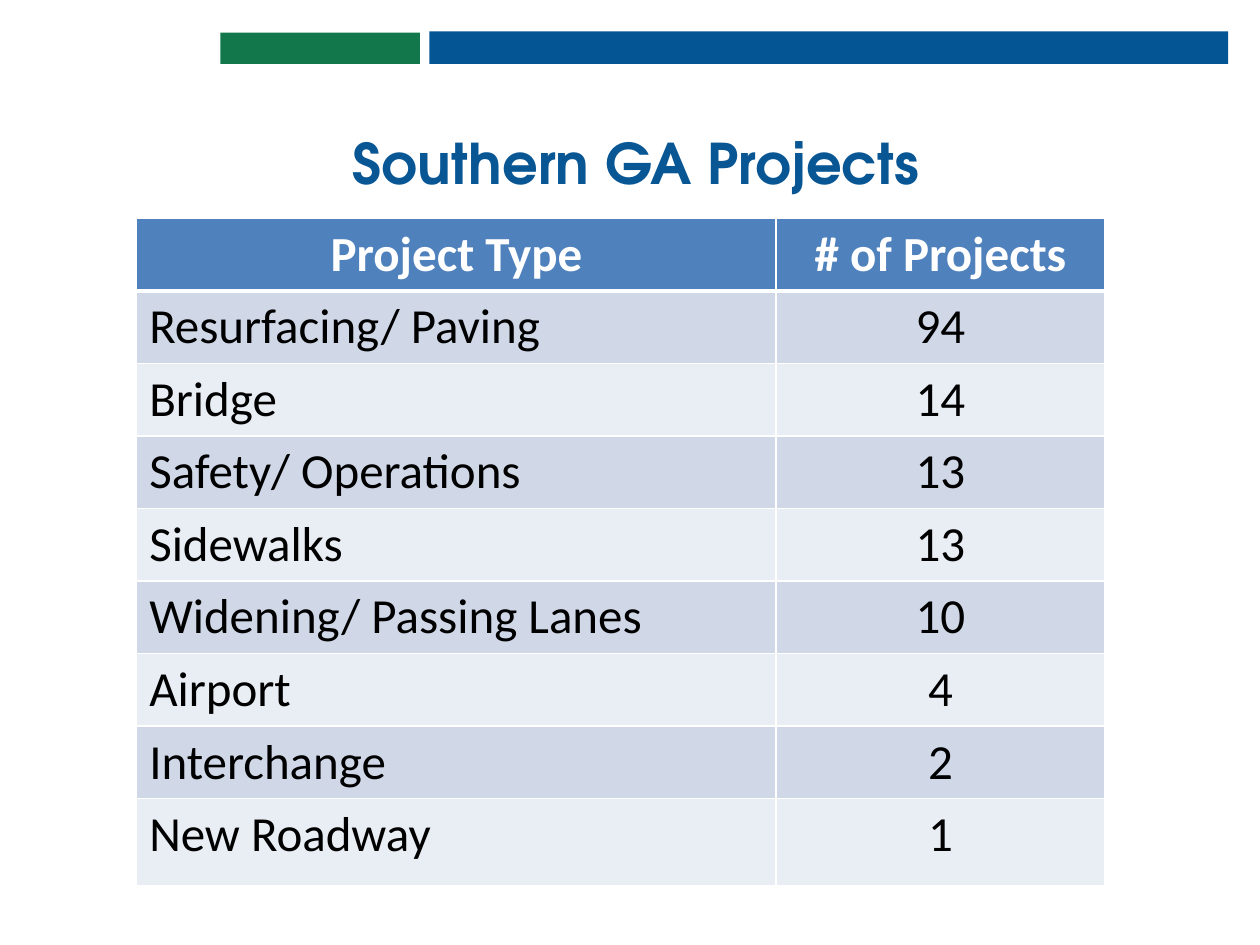
from dataclasses import dataclass

from lxml.etree import SubElement
from pptx import Presentation
from pptx.dml.color import RGBColor as RGB
from pptx.enum.shapes import MSO_SHAPE as SHAPE
from pptx.enum.text import MSO_ANCHOR as ANCHOR, MSO_AUTO_SIZE as AUTO, PP_ALIGN as ALIGN
from pptx.oxml.ns import qn
from pptx.util import Pt


@dataclass(frozen=True)
class Theme:
    blue: str = "035594"
    green: str = "12784B"
    title: str = "085694"
    header: str = "4F81BD"
    bands: tuple[str, str] = ("D0D8E8", "E9EDF4")
    white: str = "FFFFFF"
    black: str = "000000"
    title_font: str = "TeX Gyre Adventor"
    body_font: str = "Calibri"
    title_size: float = 32
    body_size: float = 28


@dataclass(frozen=True)
class Box:
    left: float
    top: float
    width: float
    height: float

    def lengths(self) -> tuple[Pt, Pt, Pt, Pt]:
        return Pt(self.left), Pt(self.top), Pt(self.width), Pt(self.height)


@dataclass(frozen=True)
class Bar:
    box: Box
    color: str


@dataclass(frozen=True)
class Project:
    kind: str
    count: int


THEME = Theme()
BARS = [
    Bar(Box(245.4, 17.9, 456.4, 18.7), THEME.blue),
    Bar(Box(125.9, 18.6, 114.1, 18), THEME.green),
]
TITLE_BOX = Box(72, 70.6, 583.2, 115.9 - 70.6)
COLUMNS = (365.4, 187.9)
ROW_HEIGHT, LAST_ROW_HEIGHT = 41.4, 50
PROJECTS = [
    Project("Resurfacing/ Paving", 94),
    Project("Bridge", 14),
    Project("Safety/ Operations", 13),
    Project("Sidewalks", 13),
    Project("Widening/ Passing Lanes", 10),
    Project("Airport", 4),
    Project("Interchange", 2),
    Project("New Roadway", 1),
]
TABLE_BOX = Box(78.1, 124.8, sum(COLUMNS), len(PROJECTS) * ROW_HEIGHT + LAST_ROW_HEIGHT)


def style_font(font, name: str, size: float, color: str, bold: bool) -> None:
    font.name, font.size, font.bold = name, Pt(size), bold
    font.color.rgb = RGB.from_string(color)


def add_bar(slide, bar: Bar) -> None:
    sp = slide.shapes.add_shape(SHAPE.RECTANGLE, *bar.box.lengths())
    sp.shadow.inherit = False
    sp.fill.solid()
    sp.fill.fore_color.rgb = RGB.from_string(bar.color)
    sp.line.fill.background()


def set_title(slide, text: str) -> None:
    sp = slide.shapes.title
    sp.left, sp.top, sp.width, sp.height = TITLE_BOX.lengths()
    tf = sp.text_frame
    tf.text = text
    tf.word_wrap, tf.auto_size = True, AUTO.NONE
    tf.vertical_anchor = ANCHOR.BOTTOM
    p = tf.paragraphs[0]
    p.alignment, p.line_spacing = ALIGN.CENTER, 0.9
    style_font(p.font, THEME.title_font, THEME.title_size, THEME.title, True)


def set_borders(cell, top: float, bottom: float) -> None:
    """Add white borders, 1 pt at the sides; call before setting the fill."""
    tc_pr = cell._tc.get_or_add_tcPr()
    for side, width in (("L", 1), ("R", 1), ("T", top), ("B", bottom)):
        ln = SubElement(tc_pr, qn(f"a:ln{side}"), w=str(Pt(width)))
        fill = SubElement(ln, qn("a:solidFill"))
        SubElement(fill, qn("a:srgbClr"), val=THEME.white)


def fill_cell(cell, text: str, row: int, col: int) -> None:
    is_header = row == 0
    set_borders(cell, top=3 if row == 1 else 1, bottom=3 if is_header else 1)
    cell.fill.solid()
    color = THEME.header if is_header else THEME.bands[(row - 1) % 2]
    cell.fill.fore_color.rgb = RGB.from_string(color)
    cell.vertical_anchor = ANCHOR.BOTTOM if is_header else ANCHOR.TOP
    cell.text = text
    p = cell.text_frame.paragraphs[0]
    p.alignment = ALIGN.CENTER if is_header or col == 1 else ALIGN.LEFT
    style_font(p.font, THEME.body_font, THEME.body_size,
               THEME.white if is_header else THEME.black, is_header)


def add_project_table(slide, projects: list[Project]) -> None:
    rows = [("Project Type", "# of Projects")]
    rows += [(project.kind, str(project.count)) for project in projects]
    table = slide.shapes.add_table(len(rows), len(COLUMNS), *TABLE_BOX.lengths()).table
    for column, width in zip(table.columns, COLUMNS):
        column.width = Pt(width)
    for r, texts in enumerate(rows):
        table.rows[r].height = Pt(LAST_ROW_HEIGHT if r == len(projects) else ROW_HEIGHT)
        for c, text in enumerate(texts):
            fill_cell(table.cell(r, c), text, r, c)


def main() -> None:
    prs = Presentation()
    prs.slide_width, prs.slide_height = Pt(720), Pt(540)
    s = prs.slides.add_slide(prs.slide_layouts[5])
    for bar in BARS:
        add_bar(s, bar)
    set_title(s, "Southern GA Projects")
    add_project_table(s, PROJECTS)
    prs.save("out.pptx")


if __name__ == "__main__":
    main()
